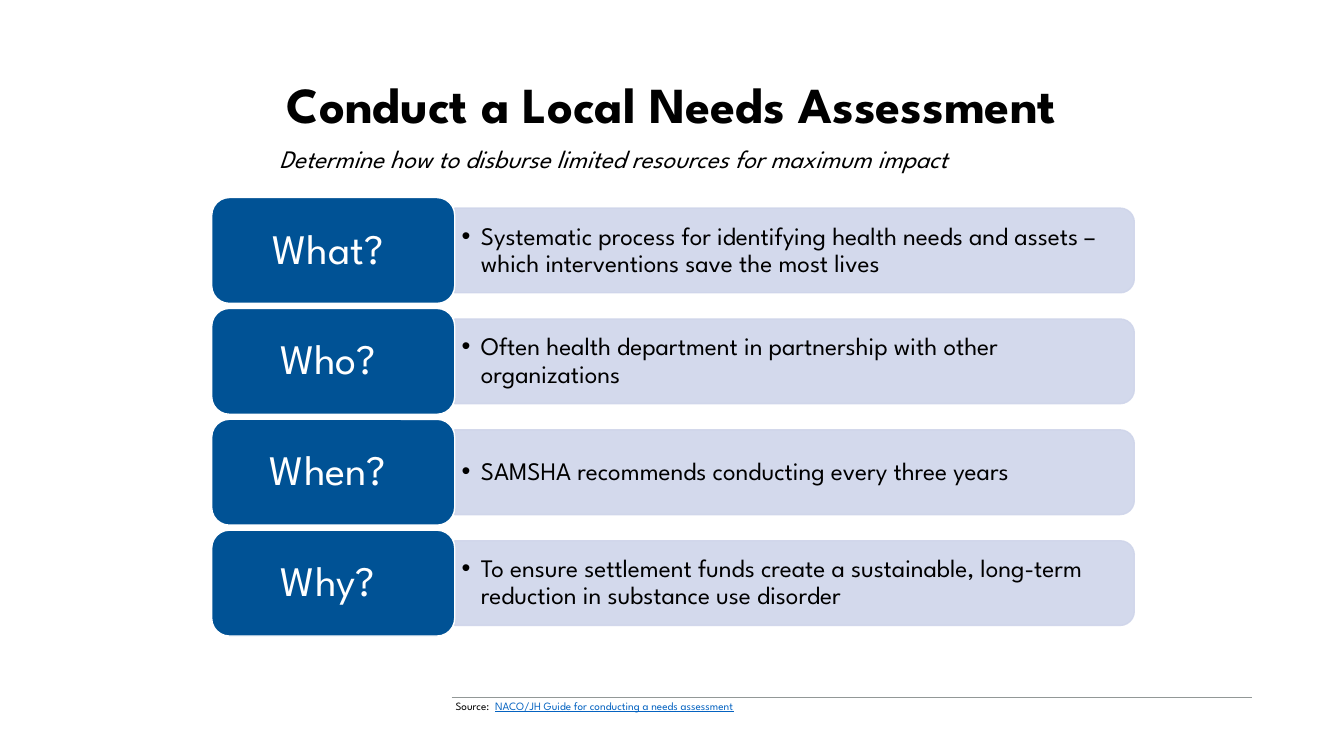
from dataclasses import dataclass

from pptx import Presentation
from pptx import util as u
from pptx.dml.color import RGBColor
from pptx.enum import shapes, text
from pptx.oxml.ns import qn
from lxml import etree


@dataclass(frozen=True)
class Theme:
    font: str = "League Spartan"
    ink: str = "000000"
    white: str = "FFFFFF"
    navy: str = "005295"
    pale: str = "CFD5EA"
    link: str = "0563C1"
    rule: str = "929897"
    title: int = 36
    label: int = 30
    body: int = 18
    note: int = 8


@dataclass(frozen=True)
class Row:
    label: str
    answer: str


THEME = Theme()
ROWS = [
    Row("What? ", "Systematic process for identifying health needs and assets – "
        "which interventions save the most lives"),
    Row("Who? ", "Often health department in partnership with other organizations"),
    Row("When? ", "SAMSHA recommends conducting every three years"),
    Row("Why? ", "To ensure settlement funds create a sustainable, long-term "
        "reduction in substance use disorder"),
]

# Row grid, in inches
TOP, PITCH = 1.96, 1.1
LEFT, SPLIT = 2.1, 4.51
HIGH = 1.05
WIDE, THICK = 6.74, 0.84


def rgb(code: str) -> RGBColor:
    return RGBColor.from_string(code)


def place(shape, x: float, y: float, w: float, h: float) -> None:
    shape.left, shape.top = u.Inches(x), u.Inches(y)
    shape.width, shape.height = u.Inches(w), u.Inches(h)


def style(para, size: int, color: str, align=text.PP_ALIGN.LEFT, space: float = 0.9) -> None:
    para.alignment = align
    para.line_spacing = space
    para.space_before = u.Pt(0)
    font = para.font
    font.name, font.size = THEME.font, u.Pt(size)
    font.color.rgb = rgb(color)


def inset(frame, side: float, edge: float) -> None:
    frame.word_wrap = True
    frame.vertical_anchor = text.MSO_ANCHOR.MIDDLE
    frame.margin_left = frame.margin_right = u.Inches(side)
    frame.margin_top = frame.margin_bottom = u.Inches(edge)


def block(slide, kind, box: tuple, fill: str, line: str):
    shape = slide.shapes.add_shape(kind, *map(u.Inches, box))
    shape.shadow.inherit = False
    shape.fill.solid()
    shape.fill.fore_color.rgb = rgb(fill)
    shape.line.color.rgb = rgb(line)
    shape.line.width = u.Pt(1)
    return shape


def fade(shape, percent: int) -> None:
    for color in shape._element.spPr.iter(qn("a:srgbClr")):
        etree.SubElement(color, qn("a:alpha"), val=str(percent * 1000))


def bullet(para, indent: float) -> None:
    props = para._p.get_or_add_pPr()
    props.set("marL", str(u.Inches(indent)))
    props.set("indent", str(-u.Inches(indent)))
    etree.SubElement(props, qn("a:buFont"), typeface="Arial")
    etree.SubElement(props, qn("a:buChar"), char="•")


def head(slide) -> None:
    title, tag = slide.shapes.title, slide.placeholders[1]
    place(title, 1.84, 0.74, 9.64, 1)
    place(tag, 2.67, 1.37, 8.26, 0.4)
    title.text_frame.text = "Conduct a Local Needs Assessment"
    tag.text_frame.text = "Determine how to disburse limited resources for maximum impact"
    for shape in (title, tag):
        shape.text_frame.vertical_anchor = text.MSO_ANCHOR.TOP
        shape.text_frame.auto_size = text.MSO_AUTO_SIZE.NONE
    para = title.text_frame.paragraphs[0]
    style(para, THEME.title, THEME.ink, text.PP_ALIGN.CENTER)
    para.font.bold = True
    para = tag.text_frame.paragraphs[0]
    style(para, THEME.body, THEME.ink, space=1.0)
    para.font.italic = True


def draw(slide, row: Row, y: float) -> None:
    mid = y + HIGH / 2

    # Answer panel, turned so its round corners face right
    box = (SPLIT + (WIDE - THICK) / 2, mid - WIDE / 2, THICK, WIDE)
    panel = block(slide, shapes.MSO_SHAPE.ROUND_2_SAME_RECTANGLE, box, THEME.pale, THEME.pale)
    panel.rotation = 90
    fade(panel, 90)

    # Answer
    answer = slide.shapes.add_textbox(*map(u.Inches, (SPLIT, mid - 0.38, 6.7, 0.76)))
    inset(answer.text_frame, 0.07, 0.04)
    para = answer.text_frame.paragraphs[0]
    para.text = row.answer
    bullet(para, 0.19)
    style(para, THEME.body, THEME.ink)

    # Label
    box = (LEFT, y, SPLIT - LEFT, HIGH)
    label = block(slide, shapes.MSO_SHAPE.ROUNDED_RECTANGLE, box, THEME.navy, THEME.white)
    inset(label.text_frame, 0.17, 0.11)
    para = label.text_frame.paragraphs[0]
    para.text = row.label
    style(para, THEME.label, THEME.white, text.PP_ALIGN.CENTER)


def foot(slide) -> None:
    ends = map(u.Inches, (4.48, 6.92, 12.42, 6.92))
    rule = slide.shapes.add_connector(shapes.MSO_CONNECTOR.STRAIGHT, *ends)
    rule.line.color.rgb = rgb(THEME.rule)
    rule.line.width = u.Pt(0.75)
    etree.SubElement(rule._element.spPr, qn("a:effectLst"))

    note = slide.shapes.add_textbox(*map(u.Inches, (4.42, 6.89, 3.57, 0.24)))
    note.text_frame.word_wrap = False
    para = note.text_frame.paragraphs[0]
    para.add_run().text = "Source:  "
    guide = para.add_run()
    guide.text = "NACO/JH Guide for conducting a needs assessment"
    style(para, THEME.note, THEME.ink, space=1.0)
    guide.font.color.rgb = rgb(THEME.link)
    guide.font.underline = True


def main() -> None:
    deck = Presentation()
    deck.slide_width, deck.slide_height = u.Inches(13.33), u.Inches(7.5)
    slide = deck.slides.add_slide(deck.slide_layouts[0])
    head(slide)
    for i, row in enumerate(ROWS):
        draw(slide, row, TOP + i * PITCH)
    foot(slide)
    deck.save("out.pptx")


if __name__ == "__main__":
    main()
